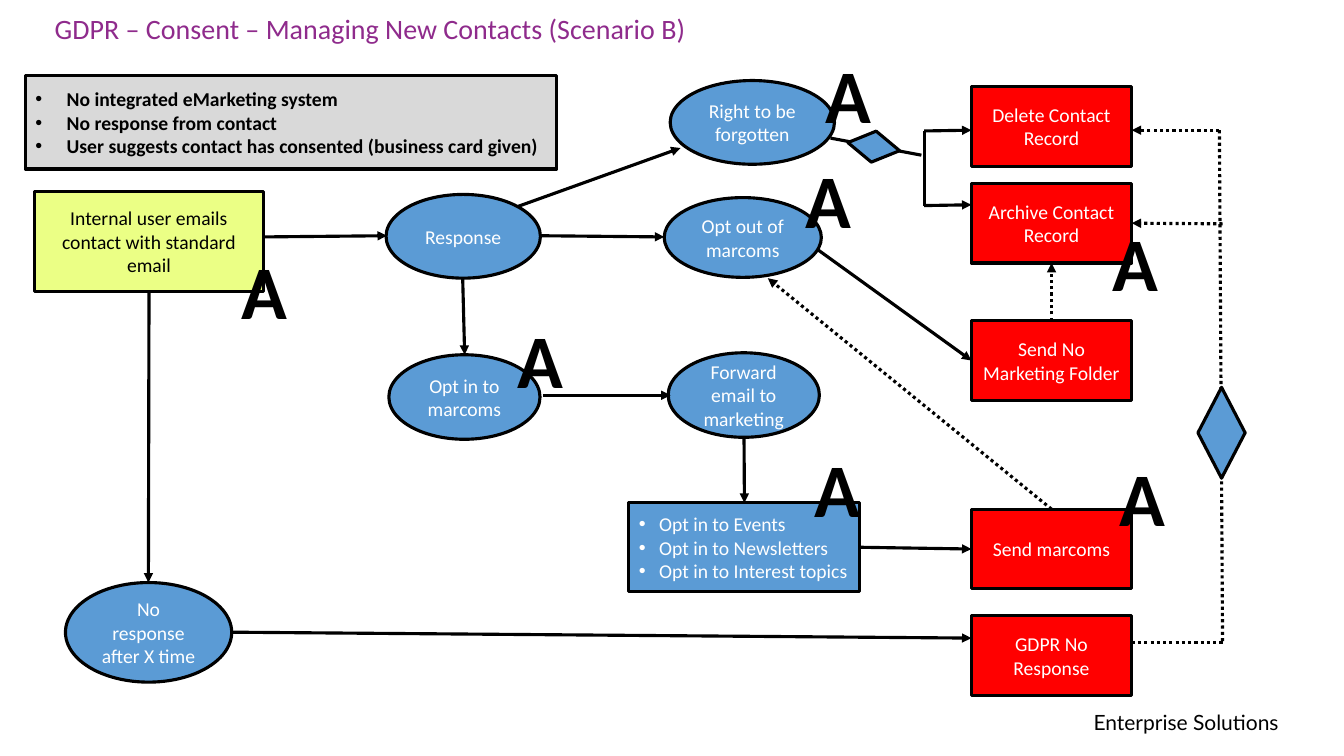
from collections import namedtuple

from lxml.etree import SubElement
from pptx import Presentation
from pptx.dml.color import RGBColor
from pptx.enum.dml import MSO_LINE
from pptx.enum.shapes import MSO_CONNECTOR, MSO_SHAPE
from pptx.enum.text import MSO_ANCHOR, PP_ALIGN
from pptx.oxml.ns import qn
from pptx.util import Cm, Pt

Box = namedtuple("Box", "left top width height")
BLACK, WHITE, BLUE, RED = "000000", "FFFFFF", "5B9BD5", "FF0000"
TRIANGLE = True


def color(hex_string):
    """Turn a hex string into a colour."""
    return RGBColor.from_string(hex_string)


def inside(box, left, top, width, height):
    """Place a rectangle by its offset from the corner of a box."""
    return Box(box.left + left, box.top + top, width, height)


def write(shape, lines, ink, align=PP_ALIGN.CENTER, indent=None, **formats):
    """Fill a shape with paragraphs, bulleted when an indent is given."""
    frame = shape.text_frame
    frame.word_wrap = True
    for index, line in enumerate(lines):
        paragraph = frame.add_paragraph() if index else frame.paragraphs[0]
        paragraph.text = line
        paragraph.alignment = align
        if indent:
            properties = paragraph._p.get_or_add_pPr()
            properties.set("marL", str(Cm(indent)))
            properties.set("indent", str(-Cm(indent)))
            SubElement(properties, qn("a:buFont"), typeface="Arial")
            SubElement(properties, qn("a:buChar"), char="•")
        for name, value in {"name": "Calibri", "size": Pt(14), **formats}.items():
            setattr(paragraph.font, name, value)
        paragraph.font.color.rgb = color(ink)
    return frame


def add_text(slide, box, text, ink, align=PP_ALIGN.LEFT, **formats):
    """Add a one-line text box."""
    text_box = slide.shapes.add_textbox(*map(Cm, box))
    return write(text_box, [text], ink, align, **formats)


def add_node(slide, box, kind, fill, lines=(), ink=WHITE, **formats):
    """Add an outlined shape with vertically centred text."""
    shape = slide.shapes.add_shape(kind, *map(Cm, box))
    shape.shadow.inherit = False
    shape.fill.solid()
    shape.fill.fore_color.rgb = color(fill)
    shape.line.color.rgb = color(BLACK)
    shape.line.width = Pt(2.25)
    write(shape, lines, ink, **formats).vertical_anchor = MSO_ANCHOR.MIDDLE
    return shape


def add_arrow(slide, box, nodes, start, end, head=False, dotted=False):
    """Draw a line between points or (node name, side) pairs."""
    points = []
    for place in (start, end):
        joined = isinstance(place[0], str)
        points += [0, 0] if joined else [Cm(box.left + place[0]), Cm(box.top + place[1])]
    line = slide.shapes.add_connector(MSO_CONNECTOR.STRAIGHT, *points)
    for place, connect in ((start, line.begin_connect), (end, line.end_connect)):
        if isinstance(place[0], str):
            connect(nodes[place[0]], place[1])
    line.line.color.rgb = color(BLACK)
    line.line.width = Pt(2.25)
    if dotted:
        line.line.dash_style = MSO_LINE.ROUND_DOT
    if head:
        SubElement(line.line._get_or_add_ln(), qn("a:tailEnd"), type="triangle")
    SubElement(line._element.spPr, qn("a:effectLst"))


def draw_title(slide, box):
    """Write the slide title."""
    frame = add_text(slide, box, "GDPR – Consent – Managing New Contacts (Scenario B)",
                     "8F2B8C", size=Pt(20))
    frame.vertical_anchor = MSO_ANCHOR.BOTTOM
    for side in ("left", "top", "right", "bottom"):
        setattr(frame, f"margin_{side}", Cm(0.08))
    frame.paragraphs[0].line_spacing = 0.9


def draw_assumptions(slide, box):
    """Draw the grey panel listing the assumptions."""
    add_node(slide, box, MSO_SHAPE.RECTANGLE, "D9D9D9",
             ["No integrated eMarketing system", "No response from contact",
              "User suggests contact has consented (business card given)"],
             BLACK, align=PP_ALIGN.LEFT, indent=0.79, bold=True)


def draw_contact(slide, box):
    """Draw the first email and its no-response outcome."""
    email = add_node(slide, inside(box, 0, 0, box.width, 2.51), MSO_SHAPE.RECTANGLE, "EBFF85",
                     ["Internal user emails contact with standard email"], BLACK)
    add_node(slide, inside(box, 0.79, box.height - 2.51, 4.19, 2.51), MSO_SHAPE.OVAL, BLUE,
             ["No response after X time"])
    return {"email": email}


def draw_responses(slide, box):
    """Draw the response ovals and the list of opt-ins."""
    ovals = [("Response", 0, 2.87, 3.89, 2.11),
             ("Opt in to marcoms", 0.07, 6.91, 3.81, 2.13),
             ("Opt out of marcoms", 7.01, 2.95, 3.96, 2.01),
             ("Right to be forgotten", 7.16, 0, 4.14, 2.11),
             ("Forward email to marketing", 7.11, 6.86, 3.81, 2.13)]
    for text, *place in ovals:
        add_node(slide, inside(box, *place), MSO_SHAPE.OVAL, BLUE, [text])
    topics = add_node(slide, inside(box, 6.12, 10.64, 5.82, 2.24), MSO_SHAPE.RECTANGLE, BLUE,
                      ["Opt in to Events", "Opt in to Newsletters", "Opt in to Interest topics"],
                      align=PP_ALIGN.LEFT, indent=0.51)
    return {"topics": topics}


def draw_records(slide, box):
    """Draw the column of red record actions."""
    records = [("delete", "Delete Contact Record", 0),
               ("archive", "Archive Contact Record", 2.44),
               ("folder", "Send No Marketing Folder", 5.9),
               ("marcoms", "Send marcoms", 10.65),
               ("silent", "GDPR No Response", 13.34)]
    return {name: add_node(slide, inside(box, 0, top, box.width, 2.01),
                           MSO_SHAPE.RECTANGLE, RED, [text])
            for name, text, top in records}


def draw_arrows(slide, box, nodes):
    """Draw the solid and dotted paths between the steps."""
    solid = [((6.65, 5.97), (9.75, 5.94), TRIANGLE),
             (("email", 2), (3.74, 14.68), TRIANGLE),
             ((11.66, 7.01), (11.71, 8.94), TRIANGLE),
             ((5.84, 15.93), (24.48, 16.08), TRIANGLE),
             ((13.03, 5.21), (17.15, 3.73), TRIANGLE),
             ((13.61, 5.94), (16.74, 5.97), TRIANGLE),
             ((13.69, 9.96), (16.9, 9.96), TRIANGLE),
             ((18.75, 11.02), ("topics", 0), TRIANGLE),
             (("topics", 3), ("marcoms", 1), TRIANGLE),
             ((20.62, 6.3), ("folder", 1), TRIANGLE),
             ((20.93, 3.48), (23.22, 3.91)),
             ((23.29, 3.3), (23.29, 5.18)),
             ((23.29, 3.3), (24.48, 3.28), TRIANGLE),
             ((23.29, 5.18), (24.48, 5.16), TRIANGLE)]
    dotted = [(("marcoms", 0), (19.35, 7.01), TRIANGLE),
              (("folder", 0), ("archive", 2), TRIANGLE),
              ((30.81, 5.64), ("archive", 3), TRIANGLE),
              ((30.73, 3.28), (28.52, 3.28), TRIANGLE),
              ((30.73, 3.28), (30.81, 16.18)),
              ((28.52, 16.18), (30.84, 16.18))]
    for path in solid:
        add_arrow(slide, box, nodes, *path)
    for path in dotted:
        add_arrow(slide, box, nodes, *path, dotted=True)


def draw_decisions(slide, box):
    """Draw the two rotated decision diamonds."""
    for rotation, *place in ((8.9, 21.36, 3.3, 1.32, 0.79), (270, 29.64, 10.31, 2.29, 1.19)):
        diamond = add_node(slide, inside(box, *place), MSO_SHAPE.FLOWCHART_DECISION, BLUE)
        diamond.rotation = rotation


def draw_markers(slide, box):
    """Mark the automated steps with a large letter."""
    for left, top in ((12.8, 7.77), (20.04, 3.73), (20.55, 1.09), (20.27, 11.02),
                      (5.84, 6.02), (27.79, 5.31), (27.97, 11.23)):
        add_text(slide, inside(box, left, top, 1.19, 2.57), "A", BLACK,
                 PP_ALIGN.CENTER, size=Pt(54), bold=True)


def draw_footer(slide, box):
    """Write the department name."""
    add_text(slide, box, "Enterprise Solutions", BLACK, name="Lato", size=Pt(15))


def main():
    """Build and save the consent flow slide."""
    presentation = Presentation()
    page = Box(0, 0, 33.87, 19.05)
    presentation.slide_width, presentation.slide_height = Cm(page.width), Cm(page.height)
    slide = presentation.slides.add_slide(presentation.slide_layouts[6])
    draw_footer(slide, Box(27.31, 17.75, 6.55, 0.89))
    draw_assumptions(slide, Box(0.64, 1.9, 13.39, 2.36))
    nodes = {**draw_contact(slide, Box(0.86, 4.83, 5.79, 12.36)),
             **draw_responses(slide, Box(9.73, 2.03, 11.94, 12.88)),
             **draw_records(slide, Box(24.48, 2.18, 4.04, 15.35))}
    draw_arrows(slide, page, nodes)
    draw_markers(slide, page)
    draw_title(slide, Box(1.3, 0.43, 19.15, 0.79))
    draw_decisions(slide, page)
    presentation.save("out.pptx")


if __name__ == "__main__":
    main()
